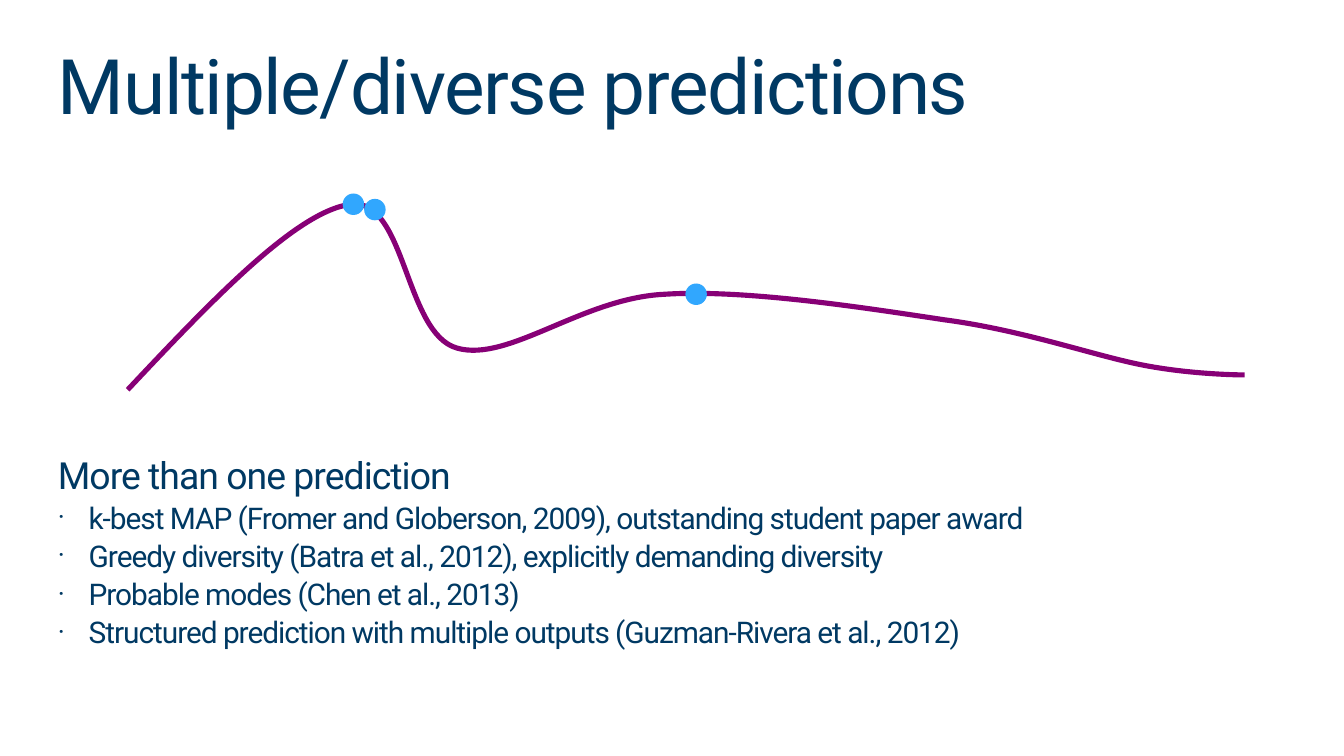
"""Build the slide on multiple and diverse predictions."""
from dataclasses import dataclass
from typing import NamedTuple

from lxml import etree
from pptx import Presentation
from pptx.dml.color import RGBColor
from pptx.enum.shapes import MSO_SHAPE
from pptx.enum.text import MSO_ANCHOR, MSO_AUTO_SIZE, PP_ALIGN
from pptx.oxml.ns import qn
from pptx.util import Inches, Pt

OVAL = MSO_SHAPE.OVAL
TOP = MSO_ANCHOR.TOP
LEFT = PP_ALIGN.LEFT
NO_AUTOFIT = MSO_AUTO_SIZE.NONE
TITLE_ONLY = 5


@dataclass(frozen=True)
class Theme:
    font: str = "Roboto"
    text: RGBColor = RGBColor(0x00, 0x39, 0x63)
    curve: RGBColor = RGBColor(0x87, 0x00, 0x76)
    dot: RGBColor = RGBColor(0x31, 0xA7, 0xFE)
    title_size: float = 41
    lead_size: float = 20
    bullet_size: float = 16
    title_tracking: float = -0.77
    body_tracking: float = -0.53
    line_spacing: float = 0.9
    space_before: float = 0.2
    curve_width: float = 2.75


class Point(NamedTuple):
    x: float
    y: float


class Segment(NamedTuple):
    first_control: Point
    second_control: Point
    end: Point


THEME = Theme()
SLIDE_WIDTH = 10
UNITS_PER_INCH = 100
DOT_SIZE = 0.16
BULLET_INDENT = 0.23

CURVE_START = Point(0.95, 2.9)
CURVE = [
    Segment(Point(1.58, 2.23), Point(2.21, 1.57), Point(2.61, 1.52)),
    Segment(Point(3.02, 1.47), Point(3.01, 2.48), Point(3.4, 2.59)),
    Segment(Point(3.78, 2.7), Point(4.33, 2.22), Point(4.94, 2.19)),
    Segment(Point(5.54, 2.15), Point(6.43, 2.29), Point(7.03, 2.38)),
    Segment(Point(7.63, 2.46), Point(8.15, 2.65), Point(8.52, 2.72)),
    Segment(Point(8.89, 2.79), Point(9.26, 2.79), Point(9.26, 2.79)),
]
DOTS = [Point(2.55, 1.44), Point(5.1, 2.11), Point(2.71, 1.48)]

TITLE = "Multiple/diverse predictions"
LEAD = "More than one prediction"
BULLETS = [
    "k-best MAP (Fromer and Globerson, 2009), outstanding student paper award",
    "Greedy diversity (Batra et al., 2012), explicitly demanding diversity",
    "Probable modes (Chen et al., 2013)",
    "Structured prediction with multiple outputs (Guzman-Rivera et al., 2012)",
]


def place(shape, left: float, top: float, width: float, height: float) -> None:
    shape.left, shape.top = Inches(left), Inches(top)
    shape.width, shape.height = Inches(width), Inches(height)


def prepare_frame(text_frame) -> None:
    text_frame.word_wrap = True
    text_frame.auto_size = NO_AUTOFIT
    text_frame.vertical_anchor = TOP
    text_frame.margin_left = text_frame.margin_right = 0
    text_frame.margin_top = text_frame.margin_bottom = 0


def format_paragraph(paragraph, size: float, tracking: float) -> None:
    paragraph.alignment = LEFT
    paragraph.line_spacing = THEME.line_spacing
    for run in paragraph.runs:
        run.font.name = THEME.font
        run.font.size = Pt(size)
        run.font.color.rgb = THEME.text
        run.font._element.set("spc", str(round(tracking * 100)))


def add_bullet(paragraph) -> None:
    properties = paragraph._p.get_or_add_pPr()
    properties.set("marL", str(Inches(BULLET_INDENT)))
    properties.set("indent", str(-Inches(BULLET_INDENT)))
    etree.SubElement(properties, qn("a:buSzPct"), val="90000")
    etree.SubElement(properties, qn("a:buFont"), typeface=THEME.font)
    etree.SubElement(properties, qn("a:buChar"), char="·")


def add_title(slide) -> None:
    title = slide.shapes.title
    place(title, 0.43, 0.36, 9.15, 0.62)
    prepare_frame(title.text_frame)
    title.text_frame.text = TITLE
    format_paragraph(
        title.text_frame.paragraphs[0], THEME.title_size, THEME.title_tracking
    )


def add_body(slide) -> None:
    body = slide.shapes.add_textbox(0, 0, 0, 0)
    place(body, 0.43, 3.4, 9.15, 1.49)
    prepare_frame(body.text_frame)
    body.text_frame.text = "\n".join([LEAD, *BULLETS])
    for index, paragraph in enumerate(body.text_frame.paragraphs):
        size = THEME.bullet_size if index else THEME.lead_size
        format_paragraph(paragraph, size, THEME.body_tracking)
        paragraph.space_before = Pt(size * THEME.space_before)
        if index:
            add_bullet(paragraph)


def add_curve(slide, start: Point, segments: list[Segment]) -> None:
    anchors = [start, *(segment.end for segment in segments)]
    left = min(anchor.x for anchor in anchors)
    top = min(anchor.y for anchor in anchors)

    def units(value: float) -> int:
        return round(value * UNITS_PER_INCH)

    builder = slide.shapes.build_freeform(
        units(start.x), units(start.y), scale=Inches(1) / UNITS_PER_INCH
    )
    builder.add_line_segments(
        [(units(anchor.x), units(anchor.y)) for anchor in anchors[1:]], close=False
    )
    curve = builder.convert_to_shape()
    curve.shadow.inherit = False
    curve.fill.background()
    curve.line.color.rgb = THEME.curve
    curve.line.width = Pt(THEME.curve_width)

    lines = list(curve._element.iter(qn("a:lnTo")))
    for line, segment in zip(lines, segments):
        bezier = etree.Element(qn("a:cubicBezTo"))
        for point in segment:
            etree.SubElement(
                bezier,
                qn("a:pt"),
                x=str(units(point.x - left)),
                y=str(units(point.y - top)),
            )
        line.getparent().replace(line, bezier)


def add_dot(slide, corner: Point) -> None:
    dot = slide.shapes.add_shape(OVAL, 0, 0, 0, 0)
    place(dot, corner.x, corner.y, DOT_SIZE, DOT_SIZE)
    dot.shadow.inherit = False
    dot.fill.solid()
    dot.fill.fore_color.rgb = THEME.dot
    dot.line.fill.background()


def main() -> None:
    presentation = Presentation()
    presentation.slide_width = Inches(SLIDE_WIDTH)
    presentation.slide_height = Inches(SLIDE_WIDTH * 9 / 16)
    slide = presentation.slides.add_slide(presentation.slide_layouts[TITLE_ONLY])
    add_title(slide)
    add_body(slide)
    add_curve(slide, CURVE_START, CURVE)
    for corner in DOTS:
        add_dot(slide, corner)
    presentation.save("out.pptx")


if __name__ == "__main__":
    main()
